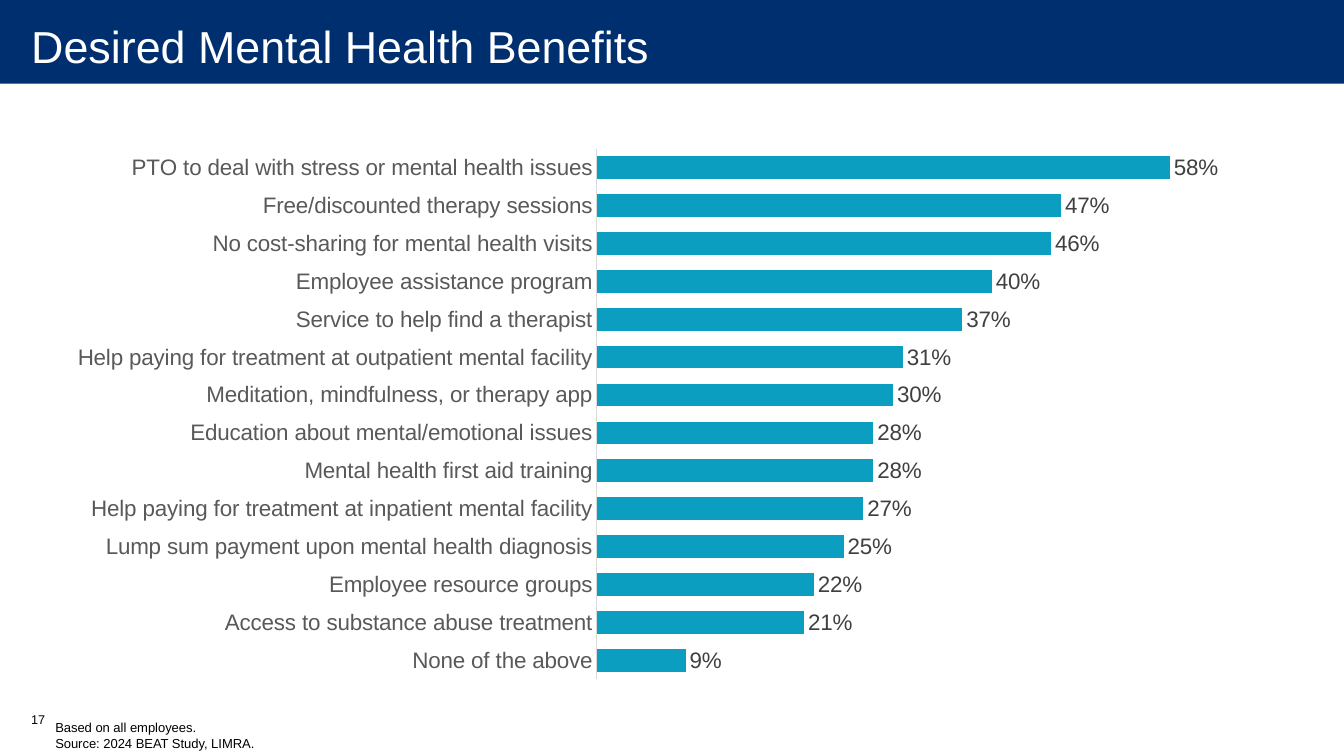
import pptx
import pptx.chart.data
import pptx.dml.color
import pptx.enum.chart
import pptx.enum.shapes
import pptx.enum.text
import pptx.oxml
import pptx.oxml.ns
import pptx.util
from pptx.util import Inches

RGBColor = pptx.dml.color.RGBColor
NAVY = RGBColor(0x00, 0x2F, 0x70)
TEAL = RGBColor(0x0B, 0x9E, 0xC1)
WHITE = RGBColor(0xFF, 0xFF, 0xFF)
BLACK = RGBColor(0x00, 0x00, 0x00)
AXIS_GRAY = RGBColor(0xD9, 0xD9, 0xD9)
CATEGORY_GRAY = RGBColor(0x59, 0x59, 0x59)
LABEL_GRAY = RGBColor(0x40, 0x40, 0x40)
FONT = "Arial"

BENEFITS = [
    ("PTO to deal with stress or mental health issues", 0.58),
    ("Free/discounted therapy sessions", 0.47),
    ("No cost-sharing for mental health visits", 0.46),
    ("Employee assistance program", 0.40),
    ("Service to help find a therapist", 0.37),
    ("Help paying for treatment at outpatient mental facility", 0.31),
    ("Meditation, mindfulness, or therapy app", 0.30),
    ("Education about mental/emotional issues", 0.28),
    ("Mental health first aid training", 0.28),
    ("Help paying for treatment at inpatient mental facility", 0.27),
    ("Lump sum payment upon mental health diagnosis", 0.25),
    ("Employee resource groups", 0.22),
    ("Access to substance abuse treatment", 0.21),
    ("None of the above", 0.09),
]


def set_font(font, size, color):
    font.name = FONT
    font.size = pptx.util.Pt(size)
    font.color.rgb = color


def add_text(text, left, top, width, height, size, color=BLACK,
             margins=(0.1, 0.05, 0.1, 0.05), anchor=pptx.enum.text.MSO_ANCHOR.TOP):
    tf = s.shapes.add_textbox(Inches(left), Inches(top), Inches(width), Inches(height)).text_frame
    tf.word_wrap = True
    tf.vertical_anchor = anchor
    tf.margin_left, tf.margin_top, tf.margin_right, tf.margin_bottom = map(Inches, margins)
    for i, line in enumerate(text.split("\n")):
        p = tf.paragraphs[0] if i == 0 else tf.add_paragraph()
        r = p.add_run()
        r.text = line
        set_font(r.font, size, color)


prs = pptx.Presentation()
prs.slide_width = Inches(13.33)
prs.slide_height = Inches(7.5)
s = prs.slides.add_slide(prs.slide_layouts[6])

band = s.shapes.add_shape(pptx.enum.shapes.MSO_SHAPE.RECTANGLE,
                          0, Inches(-0.03), Inches(13.33), Inches(0.86))
band.shadow.inherit = False
band.fill.solid()
band.fill.fore_color.rgb = NAVY
band.line.fill.background()

add_text("Desired Mental Health Benefits", 0.01, -0.03, 13.33, 0.97, size=32, color=WHITE,
         margins=(0.3, 0, 0.2, 0), anchor=pptx.enum.text.MSO_ANCHOR.MIDDLE)
add_text("Based on all employees.\nSource: 2024 BEAT Study, LIMRA.", 0.45, 7.09, 6.67, 0.41, size=9.3)

data = pptx.chart.data.CategoryChartData(number_format="0%")
data.categories = [benefit for benefit, share in reversed(BENEFITS)]
data.add_series("Series 1", [share for benefit, share in reversed(BENEFITS)])
chart = s.shapes.add_chart(pptx.enum.chart.XL_CHART_TYPE.BAR_CLUSTERED, Inches(0.28), Inches(1.21),
                           Inches(12.5), Inches(5.79), data).chart
chart.has_legend = False
chart.has_title = False
set_font(chart.font, 16, BLACK)

cat_axis = chart.category_axis
cat_axis.major_tick_mark = pptx.enum.chart.XL_TICK_MARK.NONE
cat_axis.minor_tick_mark = pptx.enum.chart.XL_TICK_MARK.NONE
cat_axis.format.line.color.rgb = AXIS_GRAY
cat_axis.format.line.width = pptx.util.Pt(0.75)
set_font(cat_axis.tick_labels.font, 16, CATEGORY_GRAY)

val_axis = chart.value_axis
val_axis.visible = False
val_axis.has_major_gridlines = False
val_axis.minimum_scale = 0
val_axis.maximum_scale = 0.7

plot = chart.plots[0]
plot.gap_width = 67
plot.vary_by_categories = False
series = plot.series[0]
series.format.fill.solid()
series.format.fill.fore_color.rgb = TEAL
labels = series.data_labels
labels.show_value = True
labels.position = pptx.enum.chart.XL_LABEL_POSITION.OUTSIDE_END
labels.number_format = "0%"
labels.number_format_is_linked = False
set_font(labels.font, 16, LABEL_GRAY)

plot_area = chart.element.find(".//" + pptx.oxml.ns.qn("c:plotArea"))
for layout in plot_area.findall(pptx.oxml.ns.qn("c:layout")):
    plot_area.remove(layout)
plot_area.insert(0, pptx.oxml.parse_xml(
    f'<c:layout {pptx.oxml.ns.nsdecls("c")}><c:manualLayout><c:layoutTarget val="inner"/>'
    '<c:xMode val="edge"/><c:yMode val="edge"/><c:x val="0.451"/><c:y val="0.046"/>'
    '<c:w val="0.549"/><c:h val="0.909"/></c:manualLayout></c:layout>'))

add_text("17", 0.21, 7.01, 0.49, 0.4, size=9)

prs.save("out.pptx")
